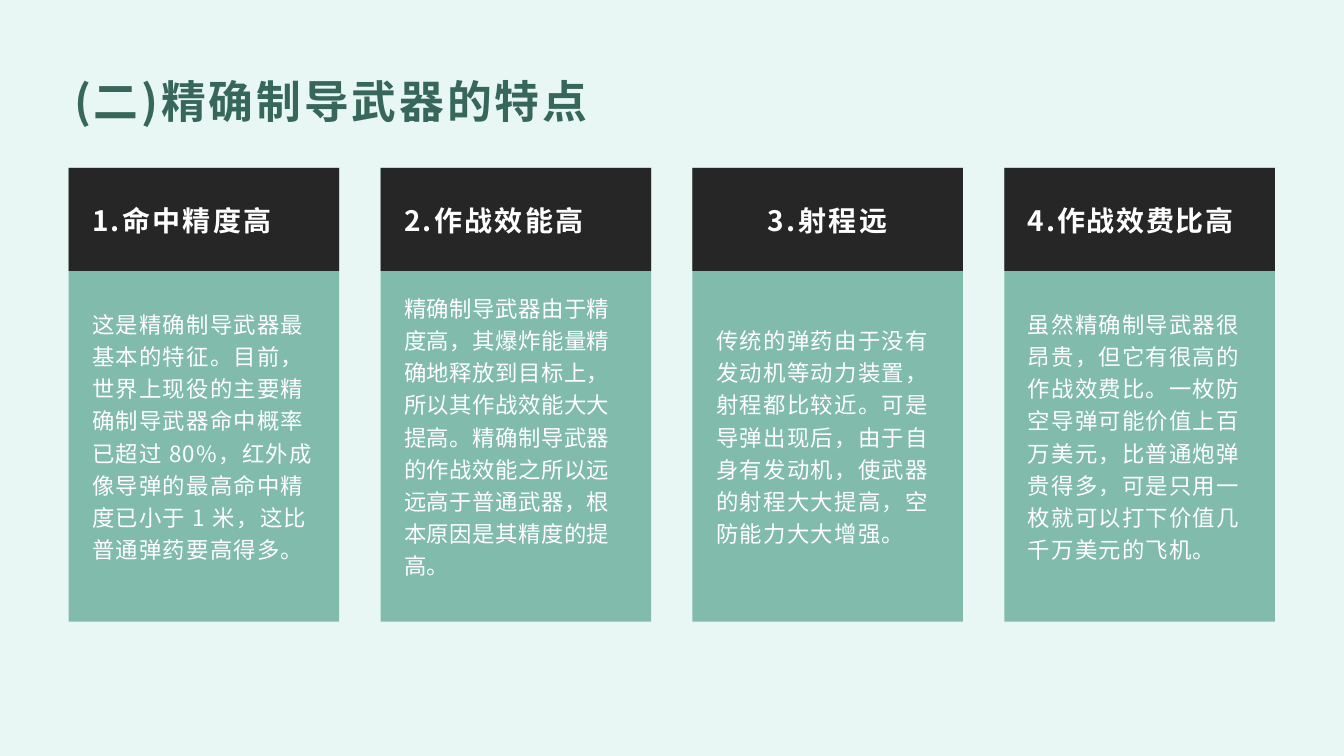
import pptx
import pptx.dml.color
import pptx.enum.shapes
import pptx.enum.text
import pptx.oxml.ns
import pptx.util
from lxml import etree

Pt = pptx.util.Pt
ALIGN = pptx.enum.text.PP_ALIGN

FONT = "Noto Sans CJK SC"
COLORS = {
    "background": "E8F7F3",
    "title": "37675A",
    "card": "80BBAC",
    "header": "262626",
    "text": "FFFFFF",
}

CARD_LEFT, CARD_TOP, CARD_STEP = 49, 120, 222.8
CARD_WIDTH, CARD_HEIGHT, HEADER_HEIGHT = 193.3, 324, 73.6
TEXT_INDENT, TEXT_WIDTH = 9.8, 173.5

CARDS = [
    {
        "heading": "1.命中精度高",
        "heading_spacing": 1.6,
        "body": "这是精确制导武器最基本的特征。目前，世界上现役的主要精确制导武器命中概率已超过 80%，"
                "红外成像导弹的最高命中精度已小于 1 米，这比普通弹药要高得多。",
        "body_spacing": 0.9,
    },
    {
        "heading": "2.作战效能高",
        "heading_spacing": 1.6,
        "body": "精确制导武器由于精度高，其爆炸能量精确地释放到目标上，所以其作战效能大大提高。"
                "精确制导武器的作战效能之所以远远高于普通武器，根本原因是其精度的提高。",
        "body_spacing": 0.4,
    },
    {
        "heading": "3.射程远",
        "heading_spacing": 1.8,
        "heading_align": ALIGN.CENTER,
        "body": "传统的弹药由于没有发动机等动力装置，射程都比较近。可是导弹出现后，"
                "由于自身有发动机，使武器的射程大大提高，空防能力大大增强。",
        "body_spacing": 1,
    },
    {
        "heading": "4.作战效费比高",
        "heading_spacing": 1.2,
        "body": "虽然精确制导武器很昂贵，但它有很高的作战效费比。一枚防空导弹可能价值上百万美元，"
                "比普通炮弹贵得多，可是只用一枚就可以打下价值几千万美元的飞机。",
        "body_spacing": 0.9,
    },
]


def rgb(color):
    return pptx.dml.color.RGBColor.from_string(COLORS[color])


def add_rectangle(slide, left, top, width, height, color):
    shape = slide.shapes.add_shape(
        pptx.enum.shapes.MSO_SHAPE.RECTANGLE, Pt(left), Pt(top), Pt(width), Pt(height)
    )
    shape.shadow.inherit = False
    shape.fill.solid()
    shape.fill.fore_color.rgb = rgb(color)
    shape.line.fill.background()


def add_text(slide, text, left, top, width, height, *, size, spacing, color="text", bold=False,
             align=ALIGN.LEFT, line_spacing=1.0, space_after=0, margins=(7.2, 3.6)):
    box = slide.shapes.add_textbox(Pt(left), Pt(top), Pt(width), Pt(height))
    frame = box.text_frame
    frame.word_wrap = True
    frame.vertical_anchor = pptx.enum.text.MSO_ANCHOR.MIDDLE
    frame.margin_left = frame.margin_right = Pt(margins[0])
    frame.margin_top = frame.margin_bottom = Pt(margins[1])
    paragraph = frame.paragraphs[0]
    paragraph.alignment = align
    paragraph.line_spacing = line_spacing
    paragraph.space_after = Pt(space_after)
    run = paragraph.add_run()
    run.text = text
    run.font.size = Pt(size)
    run.font.bold = bold
    run.font.color.rgb = rgb(color)
    run.font.name = FONT
    properties = run.font._element if hasattr(run.font, "_element") else run._r.get_or_add_rPr()
    properties.set("lang", "zh-CN")
    properties.set("spc", str(round(spacing * 100)))
    etree.SubElement(properties, pptx.oxml.ns.qn("a:ea")).set("typeface", FONT)


def add_card(slide, left, card):
    text_left = left + TEXT_INDENT
    add_rectangle(slide, left, CARD_TOP, CARD_WIDTH, CARD_HEIGHT, "card")
    add_rectangle(slide, left, CARD_TOP, CARD_WIDTH, HEADER_HEIGHT, "header")
    add_text(slide, card["body"], text_left, 195.1, TEXT_WIDTH, 230.4,
             size=16, spacing=card["body_spacing"], line_spacing=1.2, space_after=8)
    add_text(slide, card["heading"], text_left, 135.4, TEXT_WIDTH, 43.2,
             size=20, spacing=card["heading_spacing"], bold=True,
             align=card.get("heading_align", ALIGN.LEFT))


def main():
    presentation = pptx.Presentation()
    presentation.slide_width = Pt(960)
    presentation.slide_height = Pt(540)
    slide = presentation.slides.add_slide(presentation.slide_layouts[6])
    slide.background.fill.solid()
    slide.background.fill.fore_color.rgb = rgb("background")
    add_text(slide, "(二)精确制导武器的特点", 48, 48, 432, 48,
             size=32, spacing=2, color="title", bold=True, margins=(5, 2.2))
    for index, card in enumerate(CARDS):
        add_card(slide, CARD_LEFT + index * CARD_STEP, card)
    presentation.save("out.pptx")


if __name__ == "__main__":
    main()
